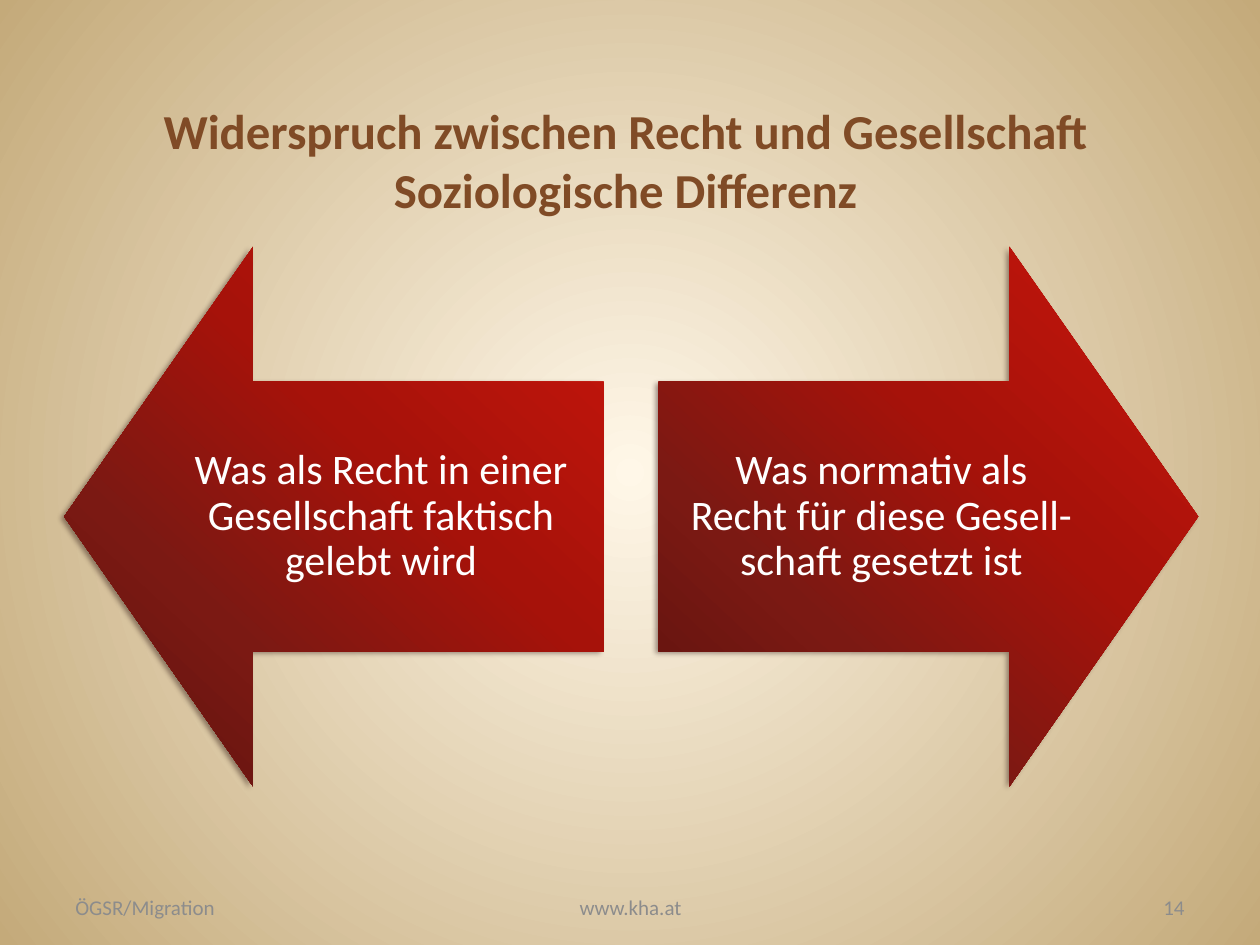
from lxml.etree import SubElement
from pptx import Presentation
from pptx.dml.color import RGBColor
from pptx.enum.shapes import MSO_SHAPE
from pptx.enum.text import MSO_ANCHOR, MSO_AUTO_SIZE, PP_ALIGN
from pptx.oxml import parse_xml
from pptx.oxml.ns import nsdecls, qn
from pptx.util import Inches, Pt

HUES = {
    "title": "804B26", "text": "FFFFFF", "foot": "8C8C8C", "shade": "1A0000",
    "glow": "FFF7E8", "sand": "C4AA7A",
    "red": "C8160C", "deep": "A6120A", "wine": "7B1913", "dark": "5B120E",
}
ROUND = '<a:path path="circle"><a:fillToRect l="50000" t="50000" r="50000" b="50000"/></a:path>'
SLOPE = f'<a:lin ang="{133 * 60000}" scaled="0"/>'


def blend(fill, root, stops, way):
    fill.solid()
    marks = "".join(
        f'<a:gs pos="{pos * 1000}"><a:srgbClr val="{HUES[hue]}"/></a:gs>'
        for pos, hue in stops
    )
    grad = parse_xml(
        f'<a:gradFill {nsdecls("a")} rotWithShape="1"><a:gsLst>{marks}</a:gsLst>{way}</a:gradFill>'
    )
    old = root.find(qn("a:solidFill"))
    root.replace(old, grad)


def shade(shape):
    shape.shadow.inherit = False
    effects = shape.element.spPr.find(qn("a:effectLst"))
    drop = SubElement(effects, qn("a:outerShdw"), blurRad=str(Pt(3.1)),
                      dist=str(Pt(2)), dir=str(150 * 60000), rotWithShape="0")
    tone = SubElement(drop, qn("a:srgbClr"), val=HUES["shade"])
    SubElement(tone, qn("a:alpha"), val="40000")


def write(shape, text, size, hue, align, anchor, bold=False):
    frame = shape.text_frame
    frame.text = text
    frame.word_wrap = True
    frame.auto_size = MSO_AUTO_SIZE.NONE
    frame.vertical_anchor = anchor
    for para in frame.paragraphs:
        para.alignment = align
        for run in para.runs:
            run.font.name = "Calibri"
            run.font.size = Pt(size)
            run.font.bold = bold
            run.font.color.rgb = RGBColor.from_string(HUES[hue])


def add_title(slide, text):
    title = slide.shapes.title
    title.left, title.top = Inches(0.43), Inches(0.52)
    title.width, title.height = Inches(9.07), Inches(1.26)
    write(title, text, 27.9, "title", PP_ALIGN.CENTER, MSO_ANCHOR.BOTTOM, True)


def add_arrow(slide, kind, left, text):
    side = Inches(4.28)
    arrow = slide.shapes.add_shape(kind, Inches(left), Inches(1.96), side, side)
    arrow.adjustments[0] = 0.5
    arrow.adjustments[1] = 0.35
    stops = [(0, "red"), (40, "deep"), (70, "wine"), (100, "dark")]
    blend(arrow.fill, arrow.element.spPr, stops, SLOPE)
    arrow.line.fill.background()
    shade(arrow)
    write(arrow, text, 24, "text", PP_ALIGN.CENTER, MSO_ANCHOR.MIDDLE)
    frame = arrow.text_frame
    frame.margin_left = frame.margin_right = Inches(0.19)
    frame.margin_top = frame.margin_bottom = Inches(0.19)
    frame.paragraphs[0].line_spacing = 0.9


def add_foot(slide, left, width, text, align):
    box = slide.shapes.add_textbox(Inches(left), Inches(6.83), Inches(width), Inches(0.52))
    write(box, text, 12, "foot", align, MSO_ANCHOR.BOTTOM)


def main():
    deck = Presentation()
    deck.slide_width, deck.slide_height = Inches(10), Inches(7.5)
    slide = deck.slides.add_slide(deck.slide_layouts[5])
    fill = slide.background.fill
    fill.solid()
    ground = slide.element.xpath(".//p:bgPr")[0]
    blend(fill, ground, [(0, "glow"), (100, "sand")], ROUND)
    add_title(slide, "Widerspruch zwischen Recht und Gesellschaft\vSoziologische Differenz")
    add_arrow(slide, MSO_SHAPE.LEFT_ARROW, 0.51,
              "Was als Recht in einer Gesellschaft faktisch gelebt wird")
    add_arrow(slide, MSO_SHAPE.RIGHT_ARROW, 5.23,
              "Was normativ als Recht für diese Gesell-schaft gesetzt ist")
    add_foot(slide, 0.5, 2.33, "ÖGSR/Migration", PP_ALIGN.LEFT)
    add_foot(slide, 3.42, 3.17, "www.kha.at", PP_ALIGN.CENTER)
    add_foot(slide, 7.17, 2.33, "14", PP_ALIGN.RIGHT)
    deck.save("out.pptx")


if __name__ == "__main__":
    main()
